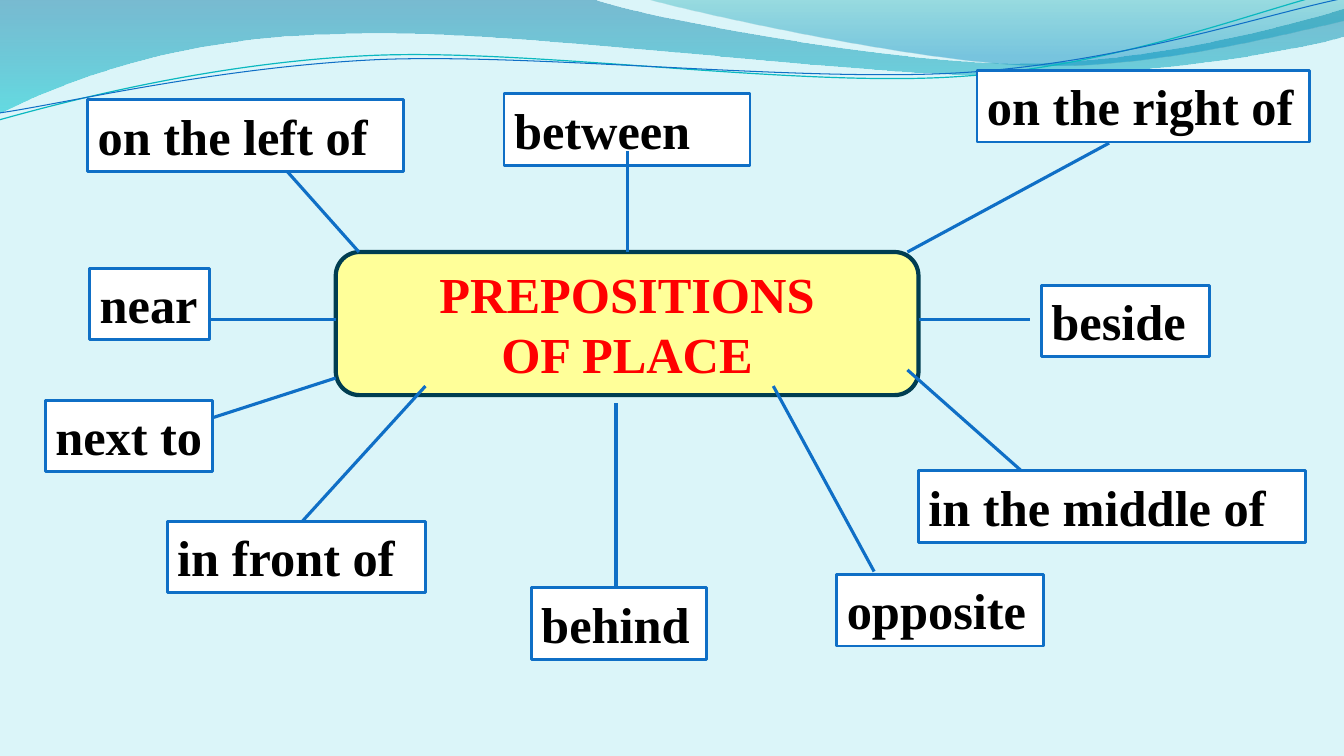
import dataclasses
import math

import lxml.etree
import pptx
import pptx.dml.color
import pptx.enum.shapes
import pptx.enum.text
import pptx.oxml.ns
import pptx.util

Inches = pptx.util.Inches
Pt = pptx.util.Pt
RGBColor = pptx.dml.color.RGBColor
qn = pptx.oxml.ns.qn
Point = tuple[float, float]

PALE_BLUE = RGBColor(0xDB, 0xF5, 0xF9)
BLUE = RGBColor(0x0F, 0x6F, 0xC6)
TEAL = RGBColor(0x0A, 0xB8, 0xBF)
DARK_TEAL = RGBColor(0x00, 0x3D, 0x51)
YELLOW = RGBColor(0xFF, 0xFF, 0x99)
RED = RGBColor(0xFF, 0x00, 0x00)
BLACK = RGBColor(0x00, 0x00, 0x00)
WHITE = RGBColor(0xFF, 0xFF, 0xFF)
FONT = "Times New Roman"
LABEL_HEIGHT = 0.71
UNITS_PER_INCH = 1000
WAVE_TILT = -2.7


@dataclasses.dataclass
class Stop:
    position: float
    color: RGBColor
    opacity: int


@dataclasses.dataclass
class Wave:
    """Each segment is one end point (straight) or three points (Bezier)."""
    start: Point
    segments: list[list[Point]]
    stops: list[Stop] = dataclasses.field(default_factory=list)
    line_color: RGBColor = BLUE
    line_width: float = 0
    center: Point = (0, 0)
    tilt: float = 0


@dataclasses.dataclass
class Label:
    text: str
    left: float
    top: float
    width: float


@dataclasses.dataclass
class Spoke:
    begin: Point
    end: Point


WAVES = [
    Wave((0, 0), [
        [(5.87, -0.01)],
        [(6.34, 0.17), (8.85, 0.63), (10.11, 0.63)],
        [(11.38, 0.63), (12.78, 0.26), (13.33, 0.09)],
        [(13.35, 0.36)],
        [(13.11, 0.44), (11.6, 0.76), (9.94, 0.75)],
        [(8.29, 0.75), (5.09, 0.28), (3.43, 0.34)],
        [(1.72, 0.36), (0.61, 0.83), (-0.01, 1.13)],
        [(0, 0)],
    ], [Stop(0, RGBColor(0x00, 0x74, 0xA1), 45), Stop(1, RGBColor(0x00, 0xC6, 0xCF), 55)]),
    Wave((6.39, -0.01), [
        [(6.79, 0.11), (9.09, 0.62), (10.25, 0.65)],
        [(11.41, 0.69), (12.82, 0.32), (13.33, 0.21)],
        [(13.33, 0)],
        [(6.39, -0.01)],
    ], [Stop(0, RGBColor(0x00, 0xA1, 0xA9), 30), Stop(0.8, RGBColor(0x00, 0x8B, 0xBF), 45)]),
    Wave((-0.01, 1.19), [
        [(0.64, 1.01), (2.11, 0.62), (3.69, 0.55)],
        [(5.27, 0.48), (7.9, 0.87), (9.5, 0.76)],
        [(11.1, 0.66), (12.52, 0.08), (13.31, -0.1)],
    ], line_color=TEAL, line_width=0.85, center=(6.65, 0.57), tilt=WAVE_TILT),
    Wave((0, 1.12), [
        [(0.63, 1.03), (2.18, 0.66), (3.78, 0.59)],
        [(5.37, 0.53), (7.96, 0.82), (9.55, 0.72)],
        [(11.15, 0.62), (12.55, 0.14), (13.34, -0.02)],
    ], line_width=0.75, center=(6.67, 0.59), tilt=WAVE_TILT),
]

LABELS = [
    Label("on the right of", 9.69, 0.7, 3.3),
    Label("on the left of", 0.87, 0.99, 3.13),
    Label("between", 5, 0.93, 2.44),
    Label("next to", 0.45, 3.97, 1.66),
    Label("near", 0.89, 2.66, 1.19),
    Label("in front of", 1.66, 5.17, 2.56),
    Label("beside", 10.33, 2.83, 1.67),
    Label("behind", 5.27, 5.83, 1.74),
    Label("opposite", 8.3, 5.7, 2.05),
    Label("in the middle of", 9.11, 4.67, 3.84),
]

SPOKES = [
    Spoke((9, 2.5), (11, 1.42)),
    Spoke((10.22, 4.75), (9, 3.67)),
    Spoke((3.56, 2.5), (2.67, 1.5)),
    Spoke((1.89, 3.17), (3.33, 3.17)),
    Spoke((9.11, 3.17), (10.22, 3.17)),
    Spoke((3, 5.17), (4.22, 3.83)),
    Spoke((1.78, 4.25), (3.33, 3.75)),
    Spoke((6.11, 5.83), (6.11, 4)),
    Spoke((8.67, 5.67), (7.67, 3.83)),
]
BETWEEN_SPOKE = Spoke((6.22, 2.5), (6.22, 1.5))


def untilted(point: Point, wave: Wave) -> Point:
    """Turn a point back by the wave's tilt and give it in path units."""
    angle = math.radians(-wave.tilt)
    x, y = point[0] - wave.center[0], point[1] - wave.center[1]
    return (round((wave.center[0] + x * math.cos(angle) - y * math.sin(angle)) * UNITS_PER_INCH),
            round((wave.center[1] + x * math.sin(angle) + y * math.cos(angle)) * UNITS_PER_INCH))


def bend_segments(shape, segments: list[list[Point]]) -> None:
    """Join each run of three line points into one Bezier curve."""
    lines = iter(shape._element.spPr.findall(".//" + qn("a:lnTo")))
    for segment in segments:
        curve = next(lines)
        if len(segment) == 3:
            curve.tag = qn("a:cubicBezTo")
            for _ in range(2):
                line = next(lines)
                curve.append(line[0])
                line.getparent().remove(line)


def add_wave(slide, wave: Wave) -> None:
    points = [untilted(point, wave) for segment in wave.segments for point in segment]
    builder = slide.shapes.build_freeform(*untilted(wave.start, wave),
                                          scale=Inches(1) / UNITS_PER_INCH)
    builder.add_line_segments(points, close=bool(wave.stops))
    shape = builder.convert_to_shape()
    bend_segments(shape, wave.segments)
    shape.rotation = wave.tilt
    shape.shadow.inherit = False
    if not wave.stops:
        shape.fill.background()
        shape.line.color.rgb = wave.line_color
        shape.line.width = Pt(wave.line_width)
        return
    shape.line.fill.background()
    shape.fill.gradient()
    shape.fill.gradient_angle = 270
    for gradient_stop, stop in zip(shape.fill.gradient_stops, wave.stops):
        gradient_stop.position = stop.position
        gradient_stop.color.rgb = stop.color
    # Opacity of each gradient stop
    colors = shape._element.spPr.findall(".//" + qn("a:srgbClr"))
    for color, stop in zip(colors, wave.stops):
        lxml.etree.SubElement(color, qn("a:alpha")).set("val", str(stop.opacity * 1000))


def add_box(slide, preset, box: tuple, text: str, fill: RGBColor, line: RGBColor,
            line_width: float, text_color: RGBColor, alignment):
    shape = slide.shapes.add_shape(preset, *map(Inches, box))
    shape.shadow.inherit = False
    shape.fill.solid()
    shape.fill.fore_color.rgb = fill
    shape.line.color.rgb = line
    shape.line.width = Pt(line_width)
    shape.text_frame.text = text
    for paragraph in shape.text_frame.paragraphs:
        paragraph.alignment = alignment
        font = paragraph.runs[0].font
        font.name, font.size, font.bold = FONT, Pt(36), True
        font.color.rgb = text_color
    return shape


def add_topic(slide):
    shape = add_box(slide, pptx.enum.shapes.MSO_SHAPE.ROUNDED_RECTANGLE, (3.33, 2.5, 5.78, 1.42),
                    "PREPOSITIONS\nOF PLACE", YELLOW, DARK_TEAL, 3, RED,
                    pptx.enum.text.PP_ALIGN.CENTER)
    frame = shape.text_frame
    frame.margin_left = frame.margin_right = frame.margin_top = frame.margin_bottom = 0
    frame.word_wrap = False
    frame.vertical_anchor = pptx.enum.text.MSO_ANCHOR.MIDDLE
    return shape


def add_label(slide, label: Label) -> None:
    shape = add_box(slide, pptx.enum.shapes.MSO_SHAPE.RECTANGLE,
                    (label.left, label.top, label.width, LABEL_HEIGHT), label.text,
                    WHITE, BLUE, 2, BLACK, pptx.enum.text.PP_ALIGN.LEFT)
    shape.text_frame.word_wrap = True
    shape.text_frame.vertical_anchor = pptx.enum.text.MSO_ANCHOR.TOP
    shape.text_frame.auto_size = pptx.enum.text.MSO_AUTO_SIZE.SHAPE_TO_FIT_TEXT


def add_spoke(slide, spoke: Spoke):
    connector = slide.shapes.add_connector(pptx.enum.shapes.MSO_CONNECTOR.STRAIGHT,
                                           *map(Inches, spoke.begin + spoke.end))
    connector.line.color.rgb = BLUE
    connector.line.width = Pt(2.25)
    lxml.etree.SubElement(connector._element.spPr, qn("a:effectLst"))
    return connector


def main() -> None:
    presentation = pptx.Presentation()
    presentation.slide_width, presentation.slide_height = Inches(13.33), Inches(7.5)
    slide = presentation.slides.add_slide(presentation.slide_layouts[6])
    slide.background.fill.solid()
    slide.background.fill.fore_color.rgb = PALE_BLUE
    # Decorative waves
    for wave in WAVES:
        add_wave(slide, wave)
    # Mind map: topic, spokes, labels, then the spoke that overlaps its label
    topic = add_topic(slide)
    for spoke in SPOKES:
        add_spoke(slide, spoke)
    for label in LABELS:
        add_label(slide, label)
    add_spoke(slide, BETWEEN_SPOKE).begin_connect(topic, 0)
    presentation.save("out.pptx")


if __name__ == "__main__":
    main()
